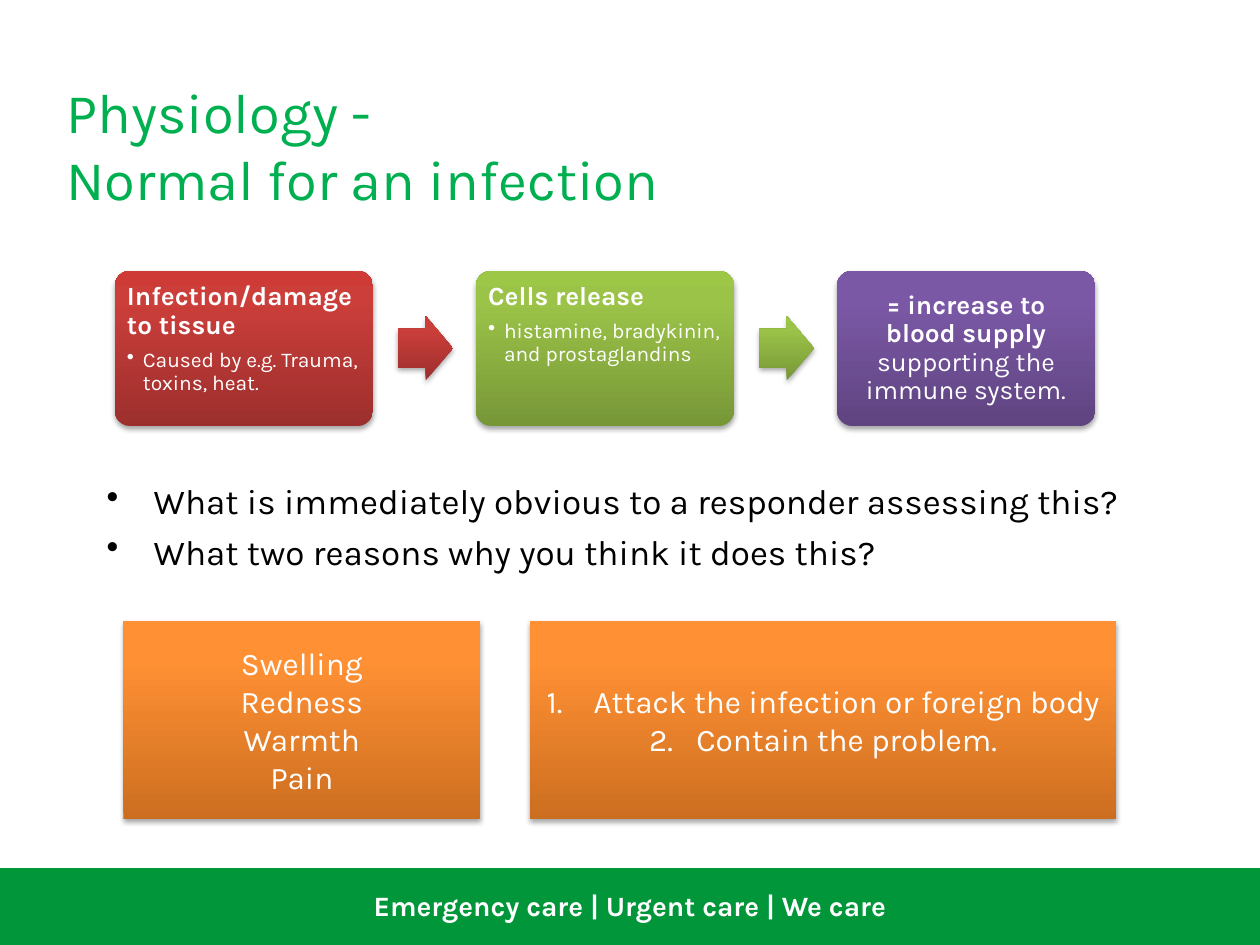
"""Build the slide on the normal physiology of an infection."""
from dataclasses import dataclass, field
from typing import Optional

import lxml.etree
import pptx
import pptx.dml.color
import pptx.enum.shapes
import pptx.enum.text
import pptx.oxml
import pptx.oxml.ns
import pptx.util

Cm = pptx.util.Cm
Pt = pptx.util.Pt
SHAPE = pptx.enum.shapes.MSO_SHAPE
ALIGN = pptx.enum.text.PP_ALIGN
ANCHOR = pptx.enum.text.MSO_ANCHOR
NS = pptx.oxml.ns.nsdecls("a")
FONT = "Karla"
WHITE = "FFFFFF"
RED = ("9C2F2D", "CB3E3A", "CE3B37")
GREEN = ("779737", "9BC348", "9DC746")
PURPLE = ("5F4480", "7B58A6", "7C57A8")
ORANGE = ("CC6E20", "FF9034", "FF9136")
DOT = '<a:buChar %s char="•"/>' % NS
NUMBER = '<a:buAutoNum %s type="arabicPeriod"/>' % NS


@dataclass
class Span:
    text: str
    bold: bool = False


@dataclass
class Para:
    spans: list[Span]
    size: float
    color: str = WHITE
    align: ALIGN = ALIGN.LEFT
    bullet: Optional[str] = None
    indent: float = 0
    line_spacing: float = 1
    after: float = 0


@dataclass
class Box:
    left: float
    top: float
    width: float
    height: float


@dataclass
class Stage:
    colors: tuple[str, str, str]
    paras: list[Para]
    anchor: ANCHOR = ANCHOR.TOP
    leads_on: bool = True


@dataclass
class Answer:
    box: Box
    lines: list[str]
    style: dict = field(default_factory=dict)


def rgb(code: str) -> pptx.dml.color.RGBColor:
    """Turn a hex string into a colour."""
    return pptx.dml.color.RGBColor.from_string(code)


def place(box: Box) -> tuple:
    """Give the lengths of a box."""
    return Cm(box.left), Cm(box.top), Cm(box.width), Cm(box.height)


def write(frame, paras: list[Para], anchor: ANCHOR) -> None:
    """Fill a text frame run by run."""
    frame.word_wrap = True
    frame.vertical_anchor = anchor
    for index, para in enumerate(paras):
        line = frame.add_paragraph() if index else frame.paragraphs[0]
        line.alignment = para.align
        line.line_spacing = para.line_spacing
        line.space_after = Pt(para.after)
        if para.bullet:
            props = line._p.get_or_add_pPr()
            props.set("marL", str(Cm(para.indent)))
            props.set("indent", str(-Cm(para.indent)))
            props.append(pptx.oxml.parse_xml(para.bullet))
        for span in para.spans:
            run = line.add_run()
            run.text = span.text
            run.font.name = FONT
            run.font.size = Pt(para.size)
            run.font.bold = span.bold
            run.font.color.rgb = rgb(para.color)


def add_text(slide, box: Box, paras: list[Para], anchor: ANCHOR = ANCHOR.TOP) -> None:
    """Add a text box."""
    write(slide.shapes.add_textbox(*place(box)).text_frame, paras, anchor)


def add_glossy(slide, kind: SHAPE, box: Box, colors: tuple[str, str, str]):
    """Add a shape with a gradient rising from its base and a soft shadow."""
    shape = slide.shapes.add_shape(kind, *place(box))
    shape.line.fill.background()
    stops = "".join(
        f'<a:gs pos="{pos}"><a:srgbClr val="{color}"/></a:gs>'
        for pos, color in zip((0, 80000, 100000), colors)
    )
    gradient = (
        f'<a:gradFill {NS} rotWithShape="1"><a:gsLst>{stops}</a:gsLst>'
        '<a:lin ang="16200000" scaled="0"/></a:gradFill>'
    )
    shadow = (
        f'<a:effectLst {NS}><a:outerShdw blurRad="{Pt(3.1)}" dist="{Pt(1.8)}" '
        'dir="5400000" rotWithShape="0"><a:srgbClr val="000000">'
        '<a:alpha val="35000"/></a:srgbClr></a:outerShdw></a:effectLst>'
    )
    props = shape._element.spPr
    props.find(pptx.oxml.ns.qn("a:ln")).addprevious(pptx.oxml.parse_xml(gradient))
    props.append(pptx.oxml.parse_xml(shadow))
    return shape


def add_stage(slide, stage: Stage, left: float) -> None:
    """Add one step of the process and the arrow that leads on from it."""
    card = add_glossy(slide, SHAPE.ROUNDED_RECTANGLE, Box(left, 5.46, 5.21, 3.13), stage.colors)
    card.adjustments[0] = 0.1
    frame = card.text_frame
    frame.margin_left = frame.margin_right = Cm(0.16)
    frame.margin_top = frame.margin_bottom = Cm(0.16)
    write(frame, stage.paras, stage.anchor)
    if stage.leads_on:
        arrow = add_glossy(slide, SHAPE.RIGHT_ARROW, Box(left + 5.72, 6.37, 1.1, 1.3), stage.colors)
        arrow.adjustments[0] = 0.6
        arrow.adjustments[1] = 0.5


def cause(heading: str, detail: str) -> list[Para]:
    """Give a bold heading with one bullet below it."""
    return [
        Para([Span(heading, True)], 15, line_spacing=0.9, after=5.25),
        Para([Span(detail)], 12, bullet=DOT, indent=0.32, line_spacing=0.9, after=1.8),
    ]


def main() -> None:
    """Build and save the slide."""
    deck = pptx.Presentation()
    deck.slide_width, deck.slide_height = Cm(25.4), Cm(19.05)
    slide = deck.slides.add_slide(deck.slide_layouts[6])

    band = slide.shapes.add_shape(SHAPE.RECTANGLE, *place(Box(0, 17.53, 25.4, 1.52)))
    band.shadow.inherit = False
    band.fill.solid()
    band.fill.fore_color.rgb = band.line.color.rgb = rgb("009639")
    band.line.width = Pt(2)
    motto = Span("Emergency care | Urgent care | We care", True)
    add_text(slide, Box(0, 17.78, 25.4, 0.94), [Para([motto], 16, align=ALIGN.CENTER)])

    title = [Para([Span(text)], 32, "00B050") for text in ("Physiology -", "Normal for an infection")]
    add_text(slide, Box(1.09, 1.32, 20.65, 3.18), title, ANCHOR.MIDDLE)

    outcome = [Span("= increase to blood supply", True), Span(" supporting the immune system.")]
    stages = [
        Stage(RED, cause("Infection/damage to tissue", "Caused by e.g. Trauma, toxins, heat.")),
        Stage(GREEN, cause("Cells release", "histamine, bradykinin, and prostaglandins")),
        Stage(PURPLE, [Para(outcome, 15, align=ALIGN.CENTER, line_spacing=0.9, after=5.25)],
              ANCHOR.MIDDLE, leads_on=False),
    ]
    for index, stage in enumerate(stages):
        add_stage(slide, stage, 2.31 + 7.28 * index)

    questions = [
        (9.55, "What is immediately obvious to a responder assessing this?"),
        (10.56, "What two reasons why you think it does this?"),
    ]
    for top, question in questions:
        add_text(slide, Box(1.9, top, 21.23, 1.4),
                 [Para([Span(question)], 20, "000000", bullet=DOT, indent=0.95)])

    answers = [
        Answer(Box(2.49, 12.52, 7.19, 3.99), ["Swelling", "Redness", "Warmth", "Pain"]),
        Answer(Box(10.69, 12.52, 11.81, 3.99),
               ["Attack the infection or foreign body", "Contain the problem."],
               {"bullet": NUMBER, "indent": 0.95}),
    ]
    for answer in answers:
        panel = add_glossy(slide, SHAPE.RECTANGLE, answer.box, ORANGE)
        paras = [Para([Span(line)], 18, align=ALIGN.CENTER, **answer.style) for line in answer.lines]
        write(panel.text_frame, paras, ANCHOR.MIDDLE)

    deck.save("out.pptx")


if __name__ == "__main__":
    main()
